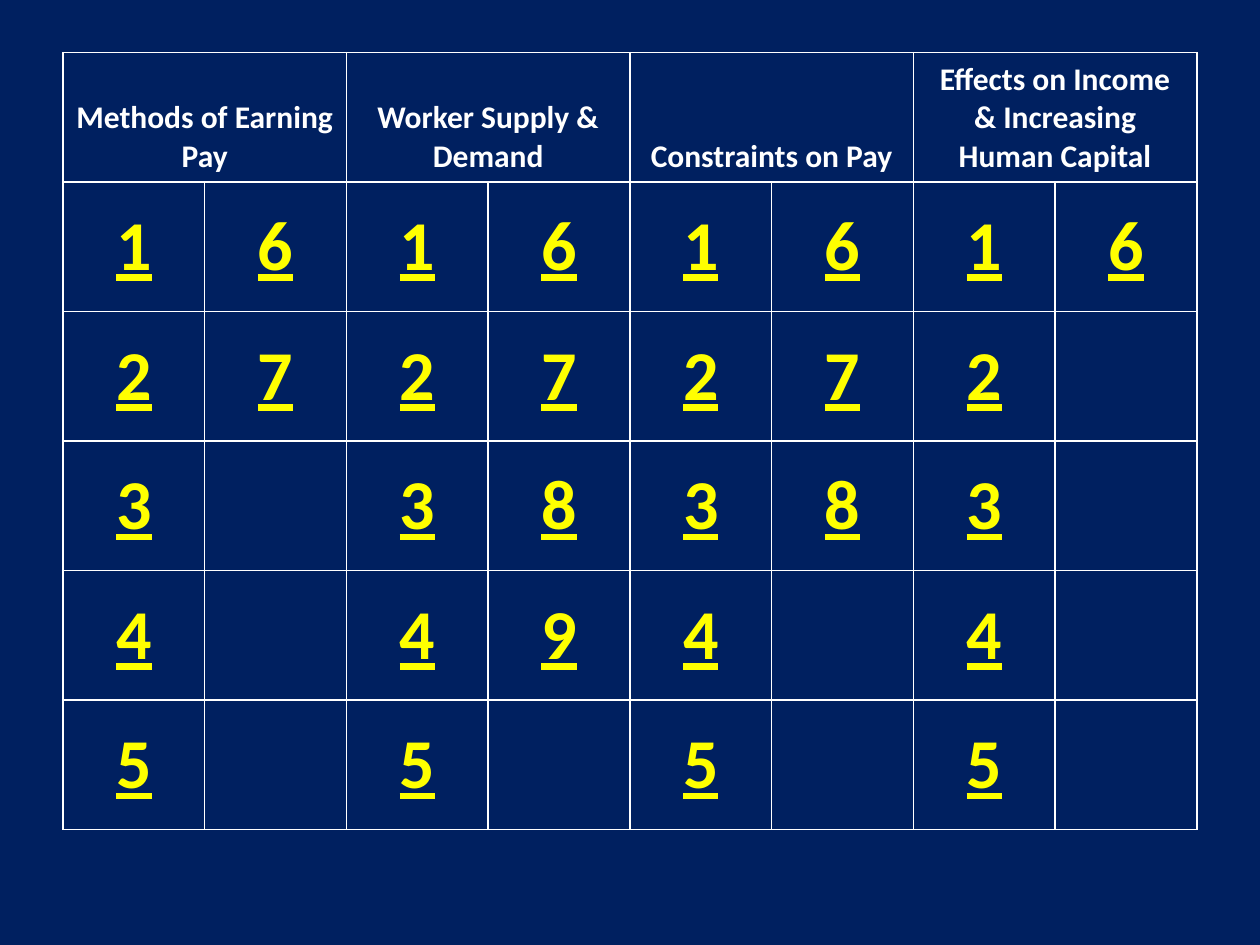
from lxml.etree import SubElement
from pptx import Presentation
from pptx.dml.color import RGBColor
from pptx.enum.text import MSO_ANCHOR as Anchor, PP_ALIGN as Align
from pptx.oxml.ns import qn
from pptx.util import Cm, Pt

COLORS = {"background": "002060", "heading": "FFFFFF", "number": "FFFF00", "border": "FFFFFF"}
FONT = "Calibri"
ROWS_PER_COLUMN = 5
COLUMNS_PER_CATEGORY = 2
QUESTION_COUNTS = {
    "Methods of Earning Pay": 7,
    "Worker Supply & Demand": 9,
    "Constraints on Pay": 8,
    "Effects on Income & Increasing Human Capital": 6,
}


def write_text(cell, text, size, color, anchor=Anchor.MIDDLE, underline=None):
    cell.vertical_anchor = anchor
    paragraph = cell.text_frame.paragraphs[0]
    paragraph.alignment = Align.CENTER
    run = paragraph.add_run()
    run.text = text
    font = run.font
    font.name, font.size, font.bold, font.underline = FONT, Pt(size), True, underline
    font.color.rgb = RGBColor.from_string(COLORS[color])


def style_cell(cell):
    """Give the cell a thin border on every side and no fill."""
    properties = cell._tc.get_or_add_tcPr()
    for side in ("a:lnL", "a:lnR", "a:lnT", "a:lnB"):
        line = SubElement(properties, qn(side), w=str(Pt(1)))
        fill = SubElement(line, qn("a:solidFill"))
        SubElement(fill, qn("a:srgbClr"), val=COLORS["border"])
    cell.fill.background()


def add_question_board(slide, left, top, width, height):
    row_count = ROWS_PER_COLUMN + 1
    column_count = COLUMNS_PER_CATEGORY * len(QUESTION_COUNTS)
    table = slide.shapes.add_table(row_count, column_count, left, top, width, height).table
    table.first_row = table.horz_banding = False
    for column in table.columns:
        column.width = width // column_count
    for row in table.rows:
        row.height = height // row_count
    for cell in table.iter_cells():
        style_cell(cell)

    for category, (title, question_count) in enumerate(QUESTION_COUNTS.items()):
        first_column = category * COLUMNS_PER_CATEGORY
        heading = table.cell(0, first_column)
        heading.merge(table.cell(0, first_column + COLUMNS_PER_CATEGORY - 1))
        write_text(heading, title, size=18, color="heading", anchor=Anchor.BOTTOM)
        for question in range(question_count):
            column, row = divmod(question, ROWS_PER_COLUMN)
            write_text(table.cell(row + 1, first_column + column), str(question + 1),
                       size=40, color="number", underline=True)


def main():
    presentation = Presentation()
    presentation.slide_width, presentation.slide_height = Cm(25.4), Cm(19.05)
    slide = presentation.slides.add_slide(presentation.slide_layouts[6])
    background = slide.background.fill
    background.solid()
    background.fore_color.rgb = RGBColor.from_string(COLORS["background"])
    add_question_board(slide, Cm(1.27), Cm(1.06), Cm(22.86), Cm(15.67))
    presentation.save("out.pptx")


if __name__ == "__main__":
    main()
